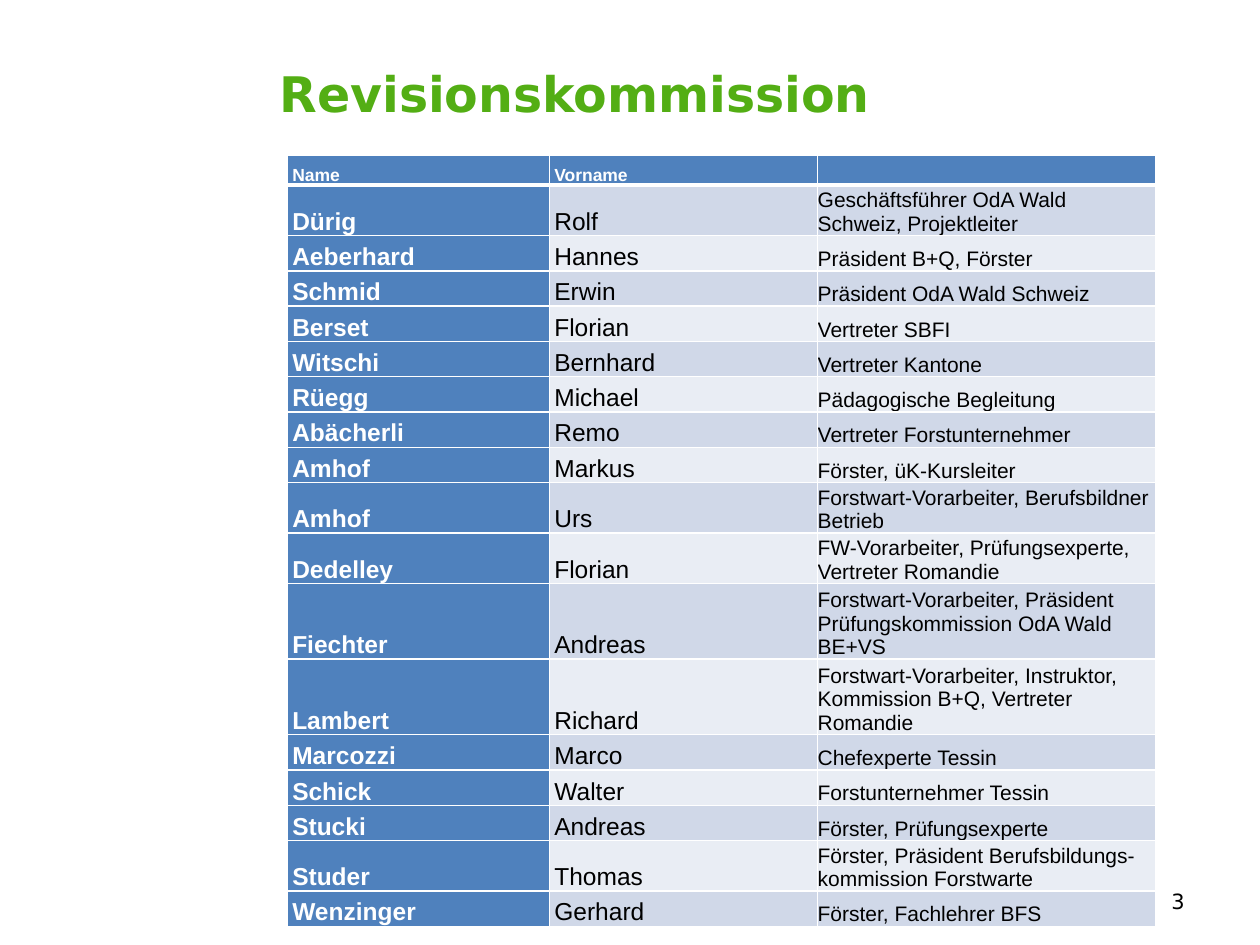
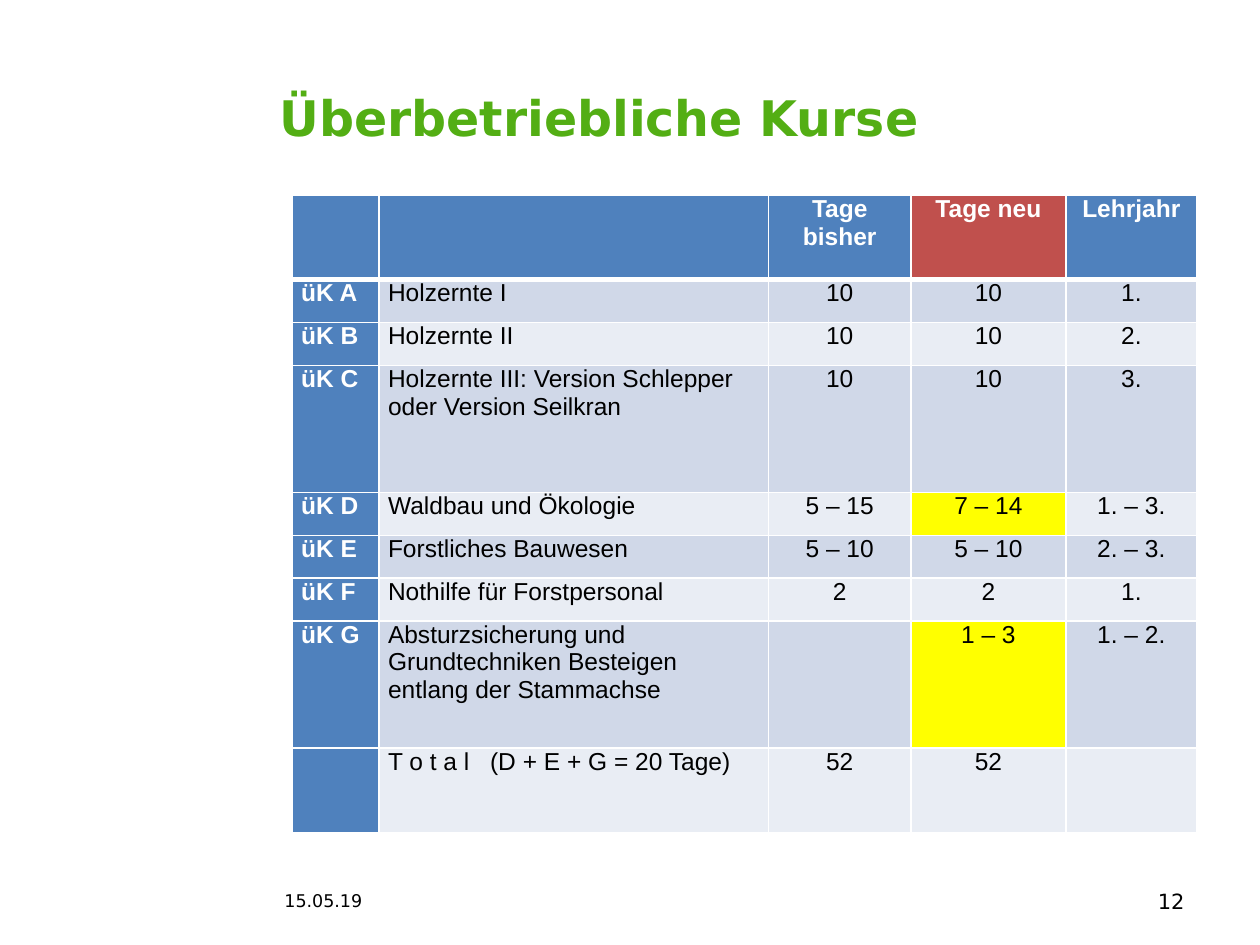
from dataclasses import dataclass, field

from lxml import etree
from pptx import Presentation
from pptx.dml.color import RGBColor
from pptx.enum import text
from pptx.oxml.ns import qn
from pptx.util import Inches, Pt

TITLE_GREEN = "53AE14"
HEADER_BLUE = "4F81BD"
BANDS = ("D0D8E8", "E9EDF4")
RED, YELLOW = "C0504D", "FFFF00"
WHITE, BLACK = "FFFFFF", "000000"
SLIDE_FONT, TABLE_FONT = "DejaVu Sans", "Arial"
LEFT, CENTER, RIGHT = text.PP_ALIGN.LEFT, text.PP_ALIGN.CENTER, text.PP_ALIGN.RIGHT
TOP, MIDDLE, BOTTOM = (text.MSO_ANCHOR.TOP, text.MSO_ANCHOR.MIDDLE,
                       text.MSO_ANCHOR.BOTTOM)


@dataclass(frozen=True)
class Column:
    width: float
    size: int = 14
    align: int = LEFT
    side_margin: float = 0.07
    top_margin: float = 0


@dataclass(frozen=True)
class TableDesign:
    left: float
    top: float
    columns: tuple
    row_heights: list
    header_size: int
    anchor: int
    highlights: dict = field(default_factory=dict)


COMMISSION = [
    ("Name", "Vorname", ""),
    ("Dürig", "Rolf", "Geschäftsführer OdA Wald Schweiz, Projektleiter"),
    ("Aeberhard", "Hannes", "Präsident B+Q, Förster"),
    ("Schmid", "Erwin", "Präsident OdA Wald Schweiz"),
    ("Berset", "Florian", "Vertreter SBFI"),
    ("Witschi", "Bernhard", "Vertreter Kantone"),
    ("Rüegg", "Michael", "Pädagogische Begleitung"),
    ("Abächerli", "Remo", "Vertreter Forstunternehmer"),
    ("Amhof", "Markus", "Förster, üK-Kursleiter"),
    ("Amhof", "Urs", "Forstwart-Vorarbeiter, Berufsbildner Betrieb"),
    ("Dedelley", "Florian", "FW-Vorarbeiter, Prüfungsexperte, Vertreter Romandie"),
    ("Fiechter", "Andreas",
     "Forstwart-Vorarbeiter, Präsident Prüfungskommission OdA Wald BE+VS"),
    ("Lambert", "Richard",
     "Forstwart-Vorarbeiter, Instruktor, Kommission B+Q, Vertreter Romandie"),
    ("Marcozzi", "Marco", "Chefexperte Tessin"),
    ("Schick", "Walter", "Forstunternehmer Tessin"),
    ("Stucki", "Andreas", "Förster, Prüfungsexperte"),
    ("Studer", "Thomas", "Förster, Präsident Berufsbildungs-kommission Forstwarte"),
    ("Wenzinger", "Gerhard", "Förster, Fachlehrer BFS"),
]
ONE_LINE_LENGTH = 30
COMMISSION_DESIGN = TableDesign(
    left=2.28, top=1.23,
    columns=(Column(2.08, side_margin=0.04, top_margin=0.01),
             Column(2.13, side_margin=0.04, top_margin=0.01),
             Column(2.68, size=12, side_margin=0)),
    row_heights=[0.24] + [0.38 if len(role) > ONE_LINE_LENGTH else 0.28
                          for _, _, role in COMMISSION[1:]],
    header_size=10, anchor=BOTTOM)

COURSES = [
    ("", "", "Tage bisher", "Tage neu", "Lehrjahr"),
    ("üK A", "Holzernte I", "10", "10", "1."),
    ("üK B", "Holzernte II", "10", "10", "2."),
    ("üK C", "Holzernte III: Version Schlepper oder Version Seilkran",
     "10", "10", "3."),
    ("üK D", "Waldbau und Ökologie", "5 – 15", "7 – 14", "1. – 3."),
    ("üK E", "Forstliches Bauwesen", "5 – 10", "5 – 10", "2. – 3."),
    ("üK F", "Nothilfe für Forstpersonal", "2", "2", "1."),
    ("üK G", "Absturzsicherung und Grundtechniken Besteigen entlang der Stammachse",
     "", "1 – 3", "1. – 2."),
    ("", "T o t a l\t(D + E + G = 20 Tage)", "52", "52", ""),
]
COURSES_DESIGN = TableDesign(
    left=2.32, top=1.55,
    columns=(Column(0.69), Column(3.09), Column(1.13, align=CENTER),
             Column(1.23, align=CENTER), Column(1.04, align=CENTER)),
    row_heights=[0.67, 0.34, 0.34, 1.01, 0.34, 0.34, 0.34, 1.01, 0.67],
    header_size=14, anchor=TOP,
    highlights={(0, 3): RED, (4, 3): YELLOW, (7, 3): YELLOW})
TOTAL_TAB = Inches(0.81)


def rgb(color: str) -> RGBColor:
    return RGBColor.from_string(color)


def style_paragraph(paragraph, size: int, font_name: str, color: str,
                    bold: bool = False, align=LEFT) -> None:
    paragraph.alignment = align
    for run in paragraph.runs:
        run.font.size = Pt(size)
        run.font.name = font_name
        run.font.bold = bold
        run.font.color.rgb = rgb(color)
    if not paragraph.runs:
        etree.SubElement(paragraph._p, qn("a:endParaRPr"), sz=str(size * 100))


def add_label(slide, label: str, left: float, top: float, width: float,
              height: float, size: int, color: str = BLACK,
              bold: bool = False, align=LEFT) -> None:
    box = slide.shapes.add_textbox(Inches(left), Inches(top),
                                   Inches(width), Inches(height))
    frame = box.text_frame
    frame.word_wrap = True
    frame.vertical_anchor = MIDDLE
    frame.text = label
    style_paragraph(frame.paragraphs[0], size, SLIDE_FONT, color, bold, align)


def add_titled_slide(presentation, title: str, title_height: float,
                     number: int, date: str = ""):
    slide = presentation.slides.add_slide(presentation.slide_layouts[6])
    add_label(slide, title, 2.12, 0.3, 7.38, title_height, 28, TITLE_GREEN, True)
    if date:
        add_label(slide, date, 2.16, 6.95, 1.17, 0.4, 10)
    add_label(slide, str(number), 7.17, 6.95, 2.33, 0.4, 12, align=RIGHT)
    return slide


def set_borders(cell, row: int) -> None:
    """White grid lines, with a thick one under the header row."""
    widths = {"lnL": 1, "lnR": 1, "lnT": 3 if row == 1 else 1,
              "lnB": 3 if row == 0 else 1}
    properties = cell._tc.get_or_add_tcPr()
    for position, (side, width) in enumerate(widths.items()):
        line = etree.Element(qn(f"a:{side}"), w=str(Pt(width)))
        fill = etree.SubElement(line, qn("a:solidFill"))
        etree.SubElement(fill, qn("a:srgbClr"), val=WHITE)
        properties.insert(position, line)


def add_tab_stop(paragraph, position: int) -> None:
    tabs = etree.SubElement(paragraph._p.get_or_add_pPr(), qn("a:tabLst"))
    etree.SubElement(tabs, qn("a:tab"), pos=str(position), algn="l")


def fill_cell(cell, value: str, row: int, column_index: int,
              design: TableDesign) -> None:
    column = design.columns[column_index]
    is_heading = row == 0 or column_index == 0
    base = HEADER_BLUE if is_heading else BANDS[(row - 1) % 2]
    cell.fill.solid()
    cell.fill.fore_color.rgb = rgb(design.highlights.get((row, column_index), base))
    set_borders(cell, row)
    cell.margin_left = cell.margin_right = Inches(column.side_margin)
    cell.margin_top, cell.margin_bottom = Inches(column.top_margin), 0
    cell.vertical_anchor = design.anchor
    cell.text = value
    paragraph = cell.text_frame.paragraphs[0]
    if "\t" in value:
        add_tab_stop(paragraph, TOTAL_TAB)
    style_paragraph(paragraph, column.size if row else design.header_size,
                    TABLE_FONT, WHITE if is_heading else BLACK,
                    is_heading, column.align)


def add_banded_table(slide, rows: list, design: TableDesign) -> None:
    table = slide.shapes.add_table(
        len(rows), len(design.columns), Inches(design.left), Inches(design.top),
        Inches(sum(column.width for column in design.columns)),
        Inches(sum(design.row_heights))).table
    table.first_row = table.horz_banding = False
    for table_column, column in zip(table.columns, design.columns):
        table_column.width = Inches(column.width)
    for row, (values, height) in enumerate(zip(rows, design.row_heights)):
        table.rows[row].height = Inches(height)
        for column_index, value in enumerate(values):
            fill_cell(table.cell(row, column_index), value, row, column_index, design)


def main() -> None:
    presentation = Presentation()
    presentation.slide_width, presentation.slide_height = Inches(10), Inches(7.5)
    commission = add_titled_slide(presentation, "Revisionskommission", 0.88, 3)
    add_banded_table(commission, COMMISSION, COMMISSION_DESIGN)
    courses = add_titled_slide(presentation, "Überbetriebliche Kurse", 1.25, 12,
                               "15.05.19")
    add_banded_table(courses, COURSES, COURSES_DESIGN)
    presentation.save("out.pptx")


if __name__ == "__main__":
    main()
